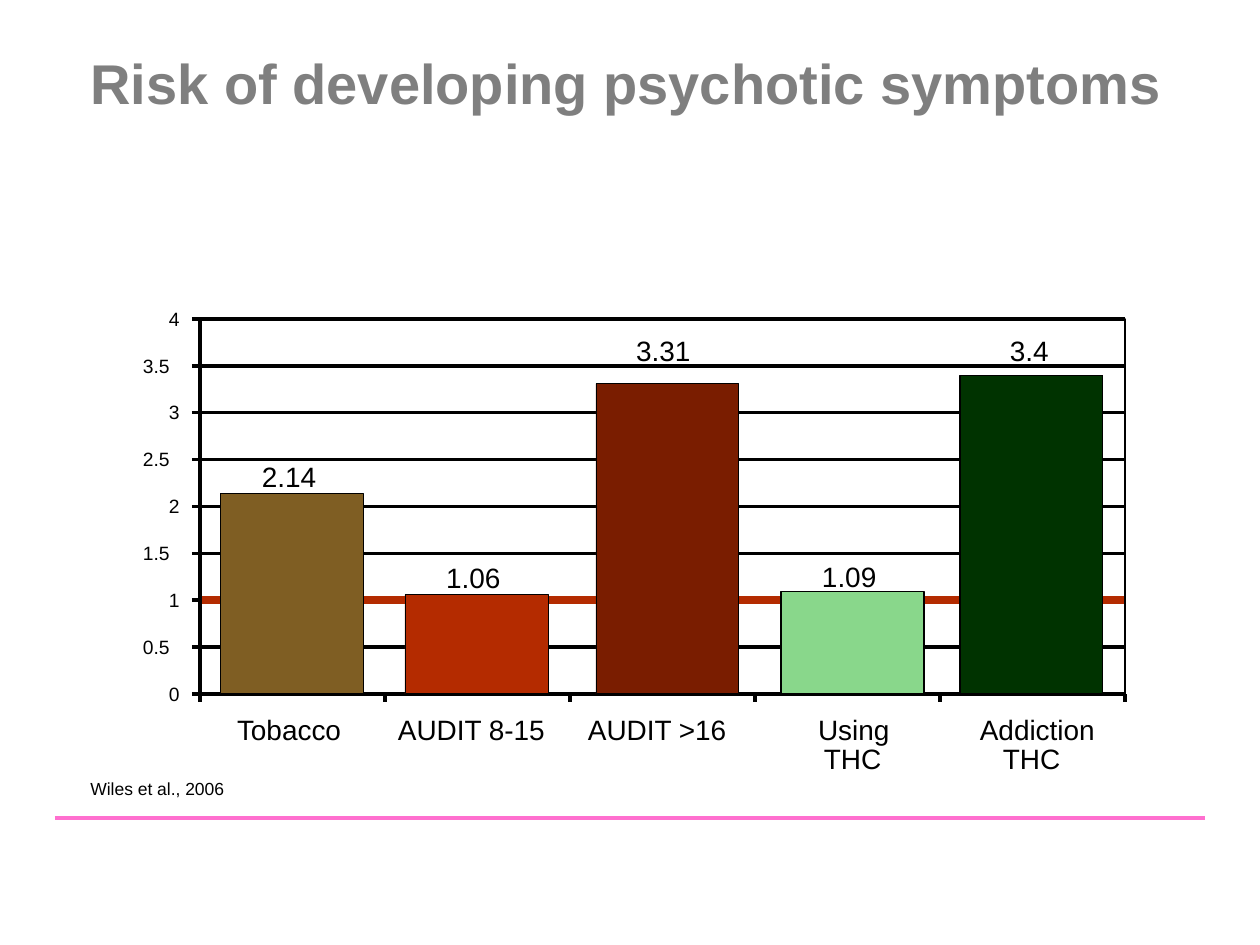
import pptx
import pptx.util
import pptx.dml.color
import pptx.enum.shapes
import pptx.enum.text
import pptx.oxml

EMU_PER_PX = 914400 // 126
BLACK = "000000"
RISK_RED = "B42B00"
LEFT, CENTER = pptx.enum.text.PP_ALIGN.LEFT, pptx.enum.text.PP_ALIGN.CENTER

TITLE = ("Risk of developing psychotic symptoms", 53, 42, 1147, 81)
CITATION = ("Wiles et al., 2006", 78, 772, 307, 34)
PLOT_LEFT, PLOT_TOP, PLOT_WIDTH, PLOT_HEIGHT = 200, 319, 925, 375
AXIS_MAX, AXIS_STEPS, TICK = 4, 8, 8
BAR_WIDTH, LABEL_HEIGHT = 143, 34
CATEGORY_TOP, CATEGORY_PITCH = 713, 29

BARS = [
    {"value": 2.14, "left": 220, "color": "7F5E23", "border": 0.5,
     "label": (262, 460, 55), "category": [("Tobacco", 237, 108)]},
    {"value": 1.06, "left": 405, "color": RISK_RED, "border": 0.5,
     "label": (446, 561, 55), "category": [("AUDIT 8-15", 398, 149)]},
    {"value": 3.31, "left": 596, "color": "7A1D00", "border": 0.5,
     "label": (636, 334, 55), "category": [("AUDIT >16", 588, 141)]},
    {"value": 1.09, "left": 781, "color": "89D78B", "border": 0.63,
     "label": (822, 560, 55), "category": [("Using", 818, 72), ("THC", 824, 58)]},
    {"value": 3.4, "left": 960, "color": "003300", "border": 0.63,
     "label": (1010, 334, 39), "category": [("Addiction", 980, 116), ("THC", 1003, 58)]},
]

presentation = pptx.Presentation()
presentation.slide_width = pptx.util.Inches(10)
presentation.slide_height = pptx.util.Inches(7.5)
slide = presentation.slides.add_slide(presentation.slide_layouts[6])


def px(*lengths):
    return [round(length * EMU_PER_PX) for length in lengths]


def rgb(color):
    return pptx.dml.color.RGBColor.from_string(color)


def set_line(shape, color, width):
    shape.line.color.rgb = rgb(color)
    shape.line.width = pptx.util.Pt(width)


def add_line(x1, y1, x2, y2, color=BLACK, width=0):
    connector = slide.shapes.add_connector(
        pptx.enum.shapes.MSO_CONNECTOR.STRAIGHT, *px(x1, y1, x2, y2))
    set_line(connector, color, width)
    connector._element.spPr.append(pptx.oxml.parse_xml(
        '<a:effectLst xmlns:a="http://schemas.openxmlformats.org/drawingml/2006/main"/>'))


def add_rectangle(left, top, width, height, fill, border):
    shape = slide.shapes.add_shape(
        pptx.enum.shapes.MSO_SHAPE.RECTANGLE, *px(left, top, width, height))
    shape.shadow.inherit = False
    if fill:
        shape.fill.solid()
        shape.fill.fore_color.rgb = rgb(fill)
    else:
        shape.fill.background()
    set_line(shape, BLACK, border)


def add_text(text, left, top, width, height, size, color=BLACK,
             bold=False, align=LEFT, label=True):
    frame = slide.shapes.add_textbox(*px(left, top, width, height)).text_frame
    frame.word_wrap = not label
    if label:
        frame.margin_left = frame.margin_top = frame.margin_right = frame.margin_bottom = 0
    paragraph = frame.paragraphs[0]
    paragraph.text = text
    paragraph.alignment = align
    paragraph.font.name = "Arial"
    paragraph.font.size = pptx.util.Pt(size)
    paragraph.font.bold = bold
    paragraph.font.color.rgb = rgb(color)


def value_y(value):
    return PLOT_TOP + PLOT_HEIGHT * (1 - value / AXIS_MAX)


plot_right, plot_bottom = PLOT_LEFT + PLOT_WIDTH, PLOT_TOP + PLOT_HEIGHT
add_line(55, 818, 1205, 818, "FF6FCF", 2)

for step in range(AXIS_STEPS + 1):
    value = step * AXIS_MAX / AXIS_STEPS
    y = value_y(value)
    color, width = (RISK_RED, 4.5) if value == 1 else (BLACK, 0)
    add_line(PLOT_LEFT, y, plot_right, y, color, width)
    add_line(PLOT_LEFT - TICK, y, PLOT_LEFT, y)
    left, label_width = (169, 11) if value == int(value) else (143, 28)
    add_text(f"{value:g}", left, y - 12, label_width, 24, 11)

add_rectangle(PLOT_LEFT, PLOT_TOP, PLOT_WIDTH, PLOT_HEIGHT, None, 0)
add_line(PLOT_LEFT, PLOT_TOP, PLOT_LEFT, plot_bottom)
for index in range(len(BARS) + 1):
    x = PLOT_LEFT + index * PLOT_WIDTH / len(BARS)
    add_line(x, plot_bottom + TICK, x, plot_bottom)

for bar in BARS:
    top = value_y(bar["value"])
    add_rectangle(bar["left"], top, BAR_WIDTH, plot_bottom - top, bar["color"], bar["border"])
    add_text(f"{bar['value']:g}", *bar["label"], LABEL_HEIGHT, 16)
    for row, (text, left, width) in enumerate(bar["category"]):
        add_text(text, left, CATEGORY_TOP + row * CATEGORY_PITCH, width, LABEL_HEIGHT, 16)

add_text(*CITATION, 10, label=False)
add_text(*TITLE, 32, "7F7F7F", bold=True, align=CENTER, label=False)

presentation.save("out.pptx")
